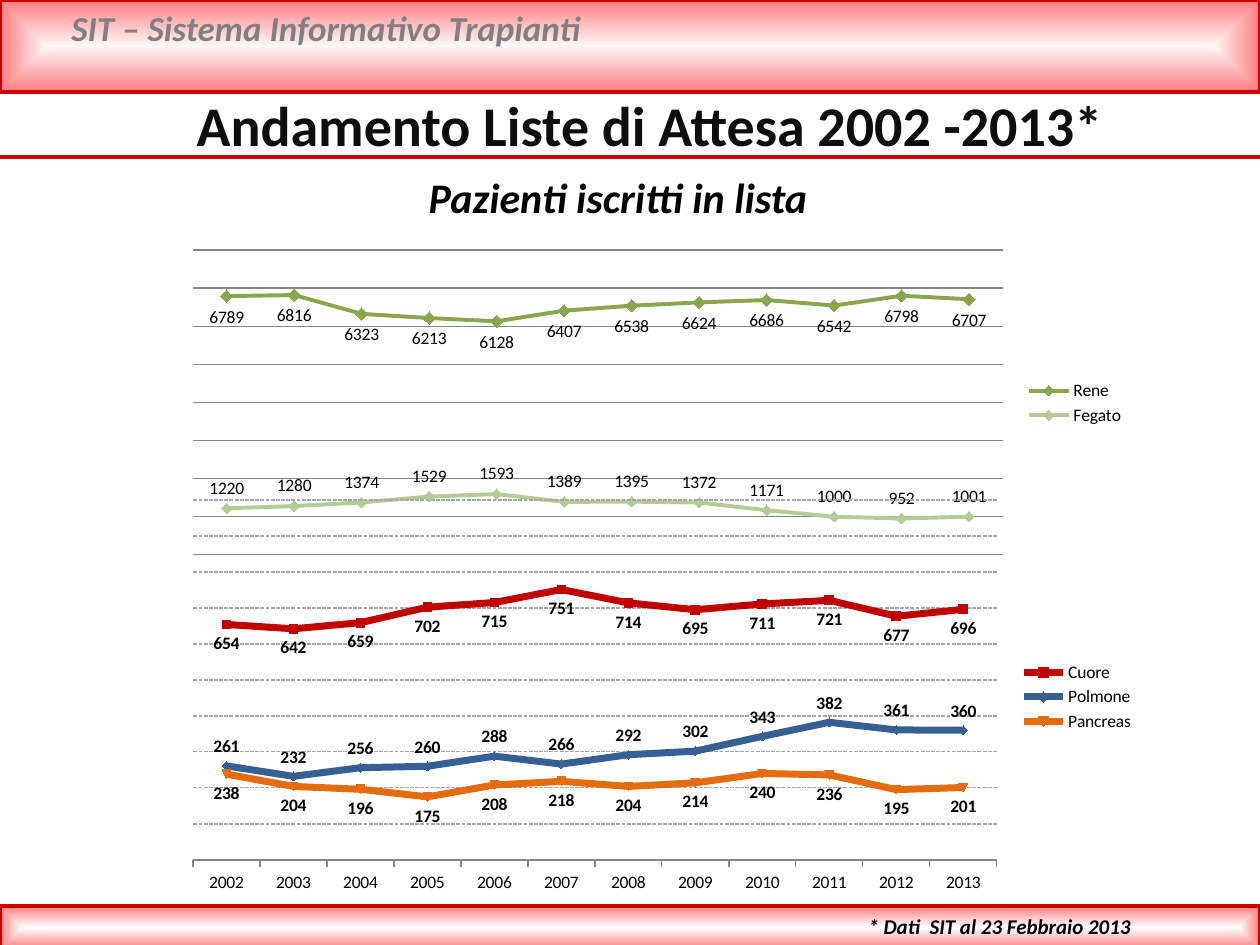
import pptx
import pptx.util
import pptx.chart.data
import pptx.oxml
import pptx.oxml.ns
from pptx.dml.color import RGBColor
from pptx.enum.chart import XL_CHART_TYPE, XL_LABEL_POSITION, XL_LEGEND_POSITION
from pptx.enum.chart import XL_MARKER_STYLE, XL_TICK_LABEL_POSITION, XL_TICK_MARK
from pptx.enum.dml import MSO_LINE
from pptx.enum.shapes import MSO_CONNECTOR, MSO_SHAPE
from pptx.enum.text import PP_ALIGN

FONT = "Calibri"
BLACK = RGBColor(0x00, 0x00, 0x00)
INK = RGBColor(0x0D, 0x0D, 0x0D)
GREY = RGBColor(0x80, 0x80, 0x80)
PALE_GREY = RGBColor(0xA6, 0xA6, 0xA6)
AXIS_GREY = RGBColor(0x86, 0x86, 0x86)
RED = RGBColor(0xCC, 0x00, 0x00)
PINK = RGBColor(0xFF, 0x7C, 0x80)
BLUSH = RGBColor(0xFF, 0xF6, 0xF6)
WHITE = RGBColor(0xFF, 0xFF, 0xFF)
GREEN = RGBColor(0x89, 0xA5, 0x4E)
DARK_GREEN = RGBColor(0x77, 0x93, 0x3C)
LIGHT_GREEN = RGBColor(0xB3, 0xCC, 0x94)
DARK_RED = RGBColor(0xC0, 0x00, 0x00)
BLUE = RGBColor(0x37, 0x60, 0x92)
ORANGE = RGBColor(0xE4, 0x6C, 0x0A)

YEARS = [str(year) for year in range(2002, 2014)]
ABOVE, BELOW = XL_LABEL_POSITION.ABOVE, XL_LABEL_POSITION.BELOW
DIAMOND, AUTO = XL_MARKER_STYLE.DIAMOND, XL_MARKER_STYLE.AUTOMATIC

# Bands: box in px, centre colour
BANDS = [((0, 0, 1260, 92), BLUSH), ((0, 906, 1260, 43), WHITE)]

# Texts: wording, box in px, size, colour, italic, alignment
TEXTS = [
    ("SIT – Sistema Informativo Trapianti", (59, 0, 1131, 55), 20, GREY, True, PP_ALIGN.LEFT),
    ("* Dati  SIT al 23 Febbraio 2013", (856, 907, 404, 38), 12, BLACK, True, PP_ALIGN.LEFT),
    ("Andamento Liste di Attesa 2002 -2013*", (144, 84, 1012, 81), 32, INK, False, PP_ALIGN.CENTER),
    ("Pazienti iscritti in lista", (352, 165, 532, 64), 24, BLACK, True, PP_ALIGN.CENTER),
]

# Series: name, values, line colour, marker colour, marker style, marker size, label place
CHARTS = [
    dict(box=(174, 244, 963, 318), plot=(193, 250, 810, 305), top=8000, step=1000,
         show_years=False, bold=False, line_width=2.25, grid=(AXIS_GREY, None),
         series=[
             ("Rene", [6789, 6816, 6323, 6213, 6128, 6407, 6538, 6624, 6686, 6542, 6798, 6707],
              GREEN, DARK_GREEN, DIAMOND, 7, BELOW),
             ("Fegato", [1220, 1280, 1374, 1529, 1593, 1389, 1395, 1372, 1171, 1000, 952, 1001],
              LIGHT_GREEN, LIGHT_GREEN, DIAMOND, 6, ABOVE),
         ]),
    dict(box=(174, 493, 973, 408), plot=(193, 500, 804, 360), top=1000, step=100,
         show_years=True, bold=True, line_width=4, grid=(PALE_GREY, MSO_LINE.SQUARE_DOT),
         series=[
             ("Cuore", [654, 642, 659, 702, 715, 751, 714, 695, 711, 721, 677, 696],
              DARK_RED, DARK_RED, AUTO, 5, BELOW),
             ("Polmone", [261, 232, 256, 260, 288, 266, 292, 302, 343, 382, 361, 360],
              BLUE, BLUE, AUTO, 5, ABOVE),
             ("Pancreas", [238, 204, 196, 175, 208, 218, 204, 214, 240, 236, 195, 201],
              ORANGE, ORANGE, AUTO, 5, BELOW),
         ]),
]


def px(length):
    return pptx.util.Emu(round(length * 914400 / 126))


def add_band(slide, box, centre):
    band = slide.shapes.add_shape(MSO_SHAPE.RECTANGLE, *map(px, box))
    band.shadow.inherit = False
    band.line.color.rgb = RED
    band.line.width = pptx.util.Pt(2)
    band.fill.gradient()
    for stop, color in zip(band.fill.gradient_stops, (centre, PINK)):
        stop.color.rgb = color
    # Turn the linear gradient into one that runs from the centre outwards
    linear = band.fill._fill._gradFill.find(pptx.oxml.ns.qn("a:lin"))
    linear.getparent().replace(linear, pptx.oxml.parse_xml(
        f'<a:path {pptx.oxml.ns.nsdecls("a")} path="shape">'
        '<a:fillToRect l="50000" t="50000" r="50000" b="50000"/></a:path>'))


def add_rule(slide, y):
    rule = slide.shapes.add_connector(MSO_CONNECTOR.STRAIGHT, 0, px(y), px(1260), px(y))
    rule.line.color.rgb = RED
    rule.line.width = pptx.util.Pt(2)
    rule._element.spPr.append(pptx.oxml.parse_xml(
        f'<a:effectLst {pptx.oxml.ns.nsdecls("a")}/>'))


def add_text(slide, wording, box, size, color, italic, alignment):
    frame = slide.shapes.add_textbox(*map(px, box)).text_frame
    frame.word_wrap = True
    para = frame.paragraphs[0]
    para.alignment = alignment
    span = para.add_run()
    span.text = wording
    span.font.name = FONT
    span.font.size = pptx.util.Pt(size)
    span.font.bold = True
    span.font.italic = italic
    span.font.color.rgb = color


def style_font(font, bold=False):
    font.name = FONT
    font.size = pptx.util.Pt(10)
    font.bold = bold
    font.color.rgb = BLACK


def place_plot(chart, box, plot):
    left, top, width, height = box
    parts = dict(x=(plot[0] - left) / width, y=(plot[1] - top) / height,
                 w=plot[2] / width, h=plot[3] / height)
    settings = "".join(f'<c:{key}Mode val="edge"/>' for key in "xy")
    settings += "".join(f'<c:{key} val="{part:.4f}"/>' for key, part in parts.items())
    area = chart._chartSpace.chart.plotArea
    for layout in area.findall(pptx.oxml.ns.qn("c:layout")):
        area.remove(layout)
    area.insert(0, pptx.oxml.parse_xml(
        f'<c:layout {pptx.oxml.ns.nsdecls("c")}><c:manualLayout>'
        f'<c:layoutTarget val="inner"/>{settings}</c:manualLayout></c:layout>'))


def add_line_chart(slide, box, plot, top, step, show_years, bold, line_width, grid, series):
    data = pptx.chart.data.CategoryChartData()
    data.categories = YEARS
    for name, values, *_ in series:
        data.add_series(name, values)
    chart = slide.shapes.add_chart(XL_CHART_TYPE.LINE_MARKERS, *map(px, box), data).chart
    chart.has_title = False
    style_font(chart.font)
    chart.has_legend = True
    chart.legend.position = XL_LEGEND_POSITION.RIGHT
    chart.legend.include_in_layout = False
    style_font(chart.legend.font)
    place_plot(chart, box, plot)

    # Axes and grid
    value_axis = chart.value_axis
    value_axis.minimum_scale, value_axis.maximum_scale = 0, top
    value_axis.major_unit = step
    value_axis.visible = False
    value_axis.has_major_gridlines = True
    grid_line = value_axis.major_gridlines.format.line
    grid_line.color.rgb, dash = grid
    grid_line.width = pptx.util.Pt(0.75)
    if dash:
        grid_line.dash_style = dash
    year_axis = chart.category_axis
    year_axis.visible = show_years
    year_axis.major_tick_mark = XL_TICK_MARK.OUTSIDE
    year_axis.tick_label_position = XL_TICK_LABEL_POSITION.LOW
    year_axis.format.line.color.rgb = AXIS_GREY
    style_font(year_axis.tick_labels.font)

    # Lines, markers and labels
    chart.plots[0].vary_by_categories = False
    for line, (_, _, color, marker_color, style, size, place) in zip(chart.plots[0].series, series):
        line.smooth = False
        line.format.line.color.rgb = color
        line.format.line.width = pptx.util.Pt(line_width)
        line.marker.style = style
        line.marker.size = size
        line.marker.format.fill.solid()
        line.marker.format.fill.fore_color.rgb = marker_color
        line.marker.format.line.color.rgb = marker_color
        labels = line.data_labels
        labels.show_value = True
        labels.position = place
        style_font(labels.font, bold)


def main():
    deck = pptx.Presentation()
    deck.slide_width, deck.slide_height = px(1260), px(945)
    slide = deck.slides.add_slide(deck.slide_layouts[6])
    for box, centre in BANDS:
        add_band(slide, box, centre)
    add_rule(slide, 157)
    for text in TEXTS:
        add_text(slide, *text)
    for chart in CHARTS:
        add_line_chart(slide, **chart)
    deck.save("out.pptx")


if __name__ == "__main__":
    main()
